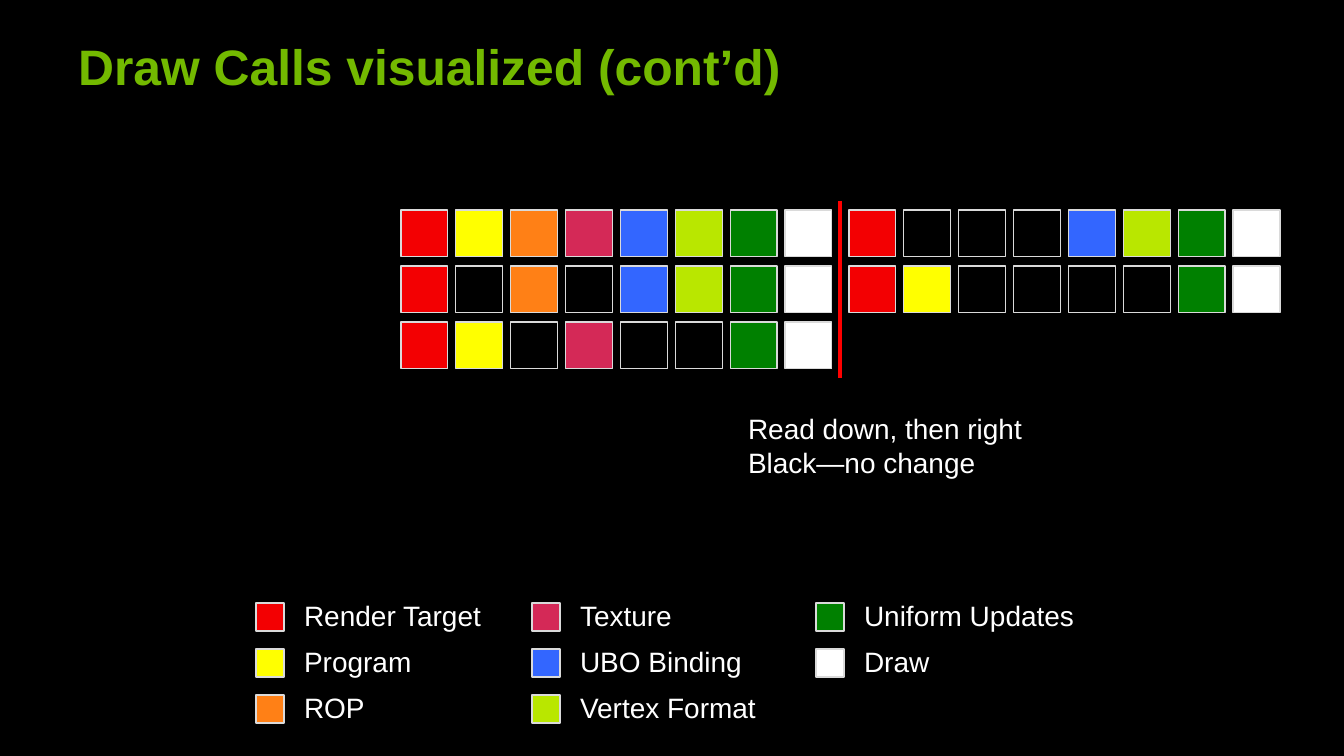
from pptx import Presentation
from pptx.dml.color import RGBColor
from pptx.enum import shapes, text
from pptx.oxml.ns import qn
from pptx.util import Pt
from lxml import etree

PX = 914400 // 112
FONT = "Arial"
BLACK, WHITE = "000000", "FFFFFF"

TITLE = "Draw Calls visualized (cont’d)"
NOTES = ["Read down, then right", "Black—no change"]

STATES = [
    ("Render Target", "F30002"),
    ("Program", "FFFF00"),
    ("ROP", "FF8016"),
    ("Texture", "D42957"),
    ("UBO Binding", "3366FF"),
    ("Vertex Format", "B9E700"),
    ("Uniform Updates", "008000"),
    ("Draw", WHITE),
]

# One string per draw call: x is a changed state, in the order of STATES.
CALL_BLOCKS = [
    (401, ["xxxxxxxx", "x.x.xxxx", "xx.x..xx"]),
    (849, ["x...xxxx", "xx....xx"]),
]
CALL_TOP, CALL_SIZE, CALL_SPAN, CALL_PITCH = 210, 47, 384, 56

LEGEND_COLUMNS = [256, 532, 816]
LEGEND_TOP, LEGEND_SIZE, LEGEND_PITCH, LEGEND_ROWS = 603, 28, 46, 3


def px(*lengths):
    return [round(length * PX) for length in lengths]


def color(value):
    return RGBColor.from_string(value)


def write(box, lines, size=18, ink=WHITE, bold=False, wrap=False,
          anchor=text.MSO_ANCHOR.TOP):
    frame = box.text_frame
    frame.word_wrap = wrap
    frame.vertical_anchor = anchor
    frame.text = "\n".join(lines)
    for para in frame.paragraphs:
        para.alignment = text.PP_ALIGN.LEFT
        para.font.name = FONT
        para.font.size = Pt(size)
        para.font.bold = bold
        para.font.color.rgb = color(ink)


def add_square(parent, left, top, size, fill):
    square = parent.add_shape(shapes.MSO_SHAPE.RECTANGLE, *px(left, top, size, size))
    square.shadow.inherit = False
    square.fill.solid()
    square.fill.fore_color.rgb = color(fill)
    square.line.color.rgb = color("DADADA")
    square.line.width = Pt(0.75)


def add_title(page):
    title = page.shapes.title
    title.left, title.top, title.width, title.height = px(67, 30, 1128, 71)
    write(title, [TITLE], size=32, ink="73B900", bold=True, wrap=True,
          anchor=text.MSO_ANCHOR.MIDDLE)


def add_divider(page):
    divider = page.shapes.add_connector(
        shapes.MSO_CONNECTOR.STRAIGHT, *px(840, 201, 840, 378))
    divider.line.color.rgb = color("FF0000")
    divider.line.width = Pt(2)
    etree.SubElement(divider._element.spPr, qn("a:effectLst"))


def add_calls(page):
    step = CALL_SPAN / (len(STATES) - 1)
    for left, calls in CALL_BLOCKS:
        for row, call in enumerate(calls):
            for column, (mark, (_, fill)) in enumerate(zip(call, STATES)):
                add_square(page.shapes, left + column * step,
                           CALL_TOP + row * CALL_PITCH, CALL_SIZE,
                           fill if mark == "x" else BLACK)


def add_legend(page):
    legend = page.shapes.add_group_shape().shapes
    for index, (name, fill) in enumerate(STATES):
        column, row = divmod(index, LEGEND_ROWS)
        left = LEGEND_COLUMNS[column]
        top = LEGEND_TOP + row * LEGEND_PITCH
        add_square(legend, left, top, LEGEND_SIZE, fill)
        label = legend.add_textbox(*px(left + 37, top - 10, 235, 45))
        write(label, [name])


def main():
    deck = Presentation()
    deck.slide_width, deck.slide_height = px(1344, 756)
    page = deck.slides.add_slide(deck.slide_layouts[5])
    page.background.fill.solid()
    page.background.fill.fore_color.rgb = color(BLACK)

    add_title(page)
    add_divider(page)
    write(page.shapes.add_textbox(*px(737, 406, 299, 79)), NOTES)
    add_calls(page)
    add_legend(page)
    deck.save("out.pptx")


if __name__ == "__main__":
    main()
